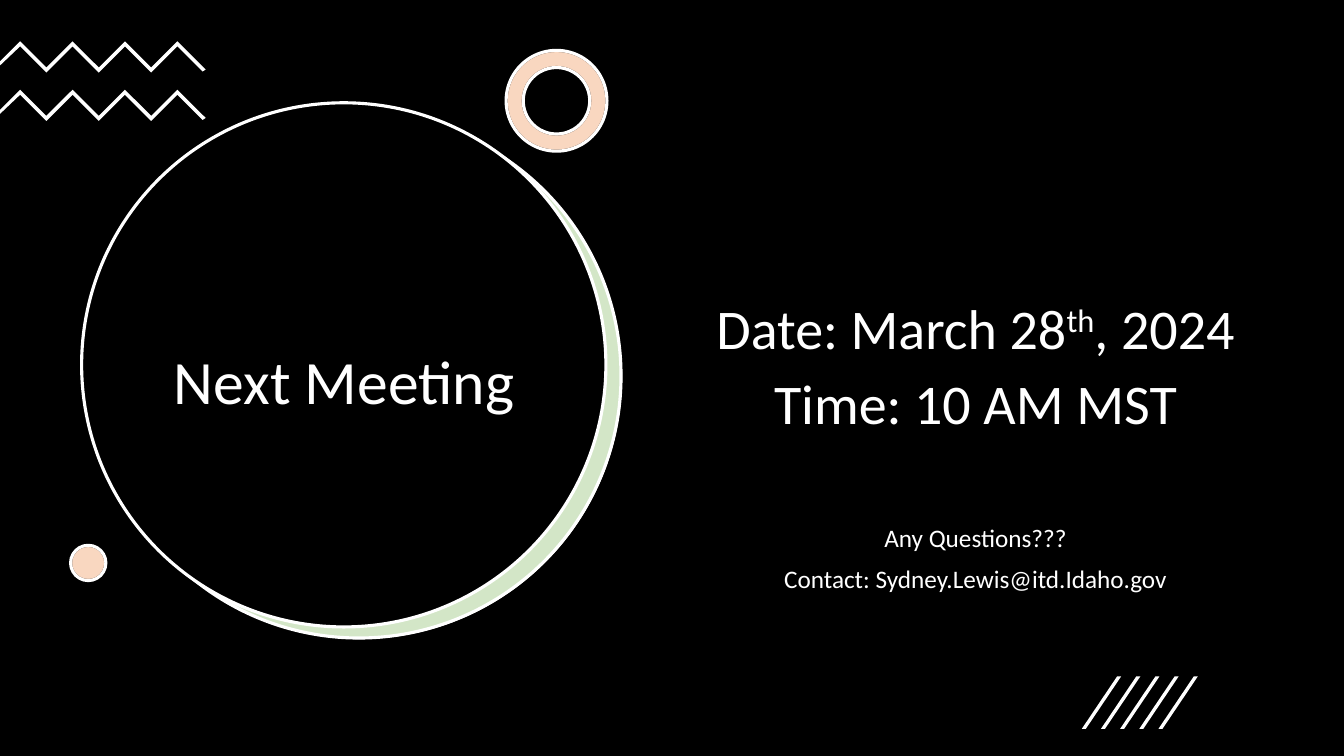
from lxml import etree
from pptx import Presentation
from pptx.dml.color import RGBColor
from pptx.enum.shapes import MSO_SHAPE
from pptx.enum.text import MSO_ANCHOR, PP_ALIGN
from pptx.oxml.ns import qn
from pptx.util import Inches, Pt

BLACK = RGBColor(0x00, 0x00, 0x00)
WHITE = RGBColor(0xFF, 0xFF, 0xFF)
GREEN = RGBColor(0x70, 0xAD, 0x47)
ORANGE = RGBColor(0xED, 0x7D, 0x31)
OVAL, DONUT = MSO_SHAPE.OVAL, MSO_SHAPE.DONUT
MIDDLE, TOP = MSO_ANCHOR.MIDDLE, MSO_ANCHOR.TOP
CENTER = PP_ALIGN.CENTER

prs = Presentation()
prs.slide_width, prs.slide_height = Inches(13.33), Inches(7.5)
slide = prs.slides.add_slide(prs.slide_layouts[6])
slide.background.fill.solid()
slide.background.fill.fore_color.rgb = BLACK


def add_outline(points):
    """Draw a closed white shape through points given in inches."""
    corners = [(Inches(x), Inches(y)) for x, y in points]
    builder = slide.shapes.build_freeform(*corners[0])
    builder.add_line_segments(corners[1:], close=True)
    outline = builder.convert_to_shape()
    outline.shadow.inherit = False
    outline.fill.solid()
    outline.fill.fore_color.rgb = WHITE
    outline.line.fill.background()


def add_text(left, top, width, height, anchor, lines):
    """Add centred lines, each a (space before, size, runs) tuple."""
    frame = slide.shapes.add_textbox(
        Inches(left), Inches(top), Inches(width), Inches(height)).text_frame
    frame.word_wrap = True
    frame.vertical_anchor = anchor
    for i, (space_before, size, runs) in enumerate(lines):
        line = frame.add_paragraph() if i else frame.paragraphs[0]
        layout = {"alignment": CENTER, "line_spacing": 0.9, "space_before": Pt(space_before)}
        for name, value in layout.items():
            setattr(line, name, value)
        for text, baseline in runs:
            run = line.add_run()
            run.text = text
            for name, value in {"name": "Calibri", "size": Pt(size)}.items():
                setattr(run.font, name, value)
            run.font.color.rgb = WHITE
            if baseline:
                run.font._element.set("baseline", str(baseline * 1000))


# Circles and ring: kind, left, top, size, fill, opacity in percent, line
circles = [
    (OVAL, 0.97, 1.14, 5.2, WHITE, 100, None),
    (OVAL, 0.96, 1.13, 5.2, GREEN, 30, WHITE),
    (OVAL, 0.81, 1.02, 5.2, BLACK, 100, WHITE),
    (DONUT, 5.02, 0.5, 1, WHITE, 100, BLACK),
    (DONUT, 5.02, 0.5, 1, ORANGE, 30, WHITE),
    (OVAL, 0.7, 5.41, 0.35, WHITE, 100, BLACK),
    (OVAL, 0.7, 5.41, 0.35, ORANGE, 30, WHITE),
]
for kind, left, top, size, color, opacity, line_color in circles:
    circle = slide.shapes.add_shape(
        kind, Inches(left), Inches(top), Inches(size), Inches(size))
    circle.shadow.inherit = False
    if kind == DONUT:
        circle.adjustments[0] = 0.17
    circle.fill.solid()
    circle.fill.fore_color.rgb = color
    if opacity < 100:
        tint = circle._element.spPr.find(qn("a:solidFill"))[0]
        etree.SubElement(tint, qn("a:alpha")).set("val", str(opacity * 1000))
    if line_color is None:
        circle.line.fill.background()
    else:
        circle.line.color.rgb = line_color
        circle.line.width = Pt(2.25)

# Zigzag bands
for top in (0.41, 0.89):
    peaks = [(0.2 + 0.26 * i, top + 0.26 * (i % 2)) for i in range(7)]
    lower_edge = [(x, y + 0.05) for x, y in reversed(peaks)]
    right_end = [(2.04, top + 0.28), (2.01, top + 0.3)]
    left_end = [(0, top + 0.24), (0, top + 0.2)]
    add_outline(peaks + right_end + lower_edge + left_end)

# Slanted strokes
for i in range(5):
    left = 10.73 + 0.19 * i
    add_outline([(left + 0.04, 7.23), (left, 7.23), (left + 0.35, 6.71), (left + 0.39, 6.71)])

# Title
add_text(1.21, 2.05, 4.41, 3.52, MIDDLE, [(0, 44, [("Next Meeting", 0)])])

# Meeting details and contact
add_text(6.82, 2.94, 5.71, 3.06, TOP, [
    (0, 40, [("Date: March 28", 0), ("th", 30), (", 2024", 0)]),
    (10, 40, [("Time: 10 AM MST", 0)]),
    (64, 18, [("Any Questions???", 0)]),
    (10, 18, [("Contact: Sydney.Lewis@itd.Idaho.gov", 0)]),
])

prs.save("out.pptx")
